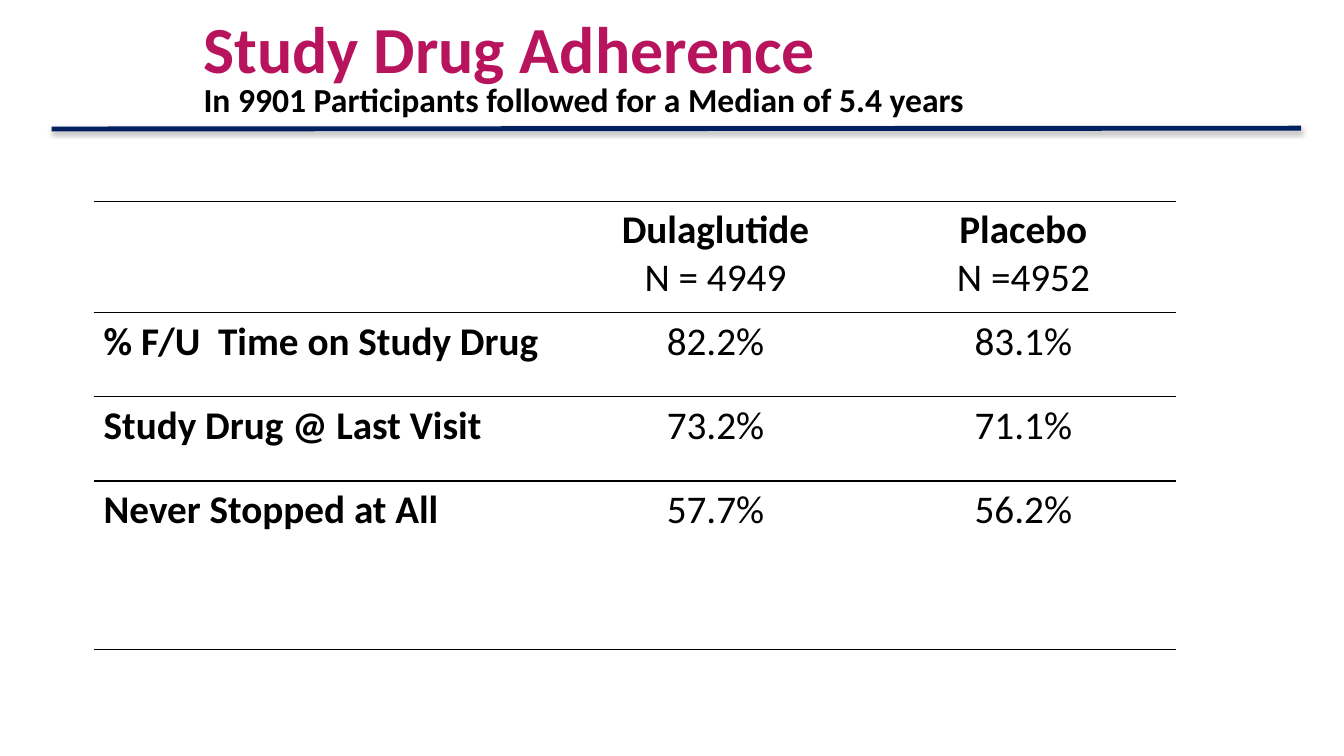
from lxml import etree
from pptx import Presentation
from pptx.dml.color import RGBColor
from pptx.enum.shapes import MSO_CONNECTOR
from pptx.enum.text import MSO_ANCHOR, PP_ALIGN
from pptx.oxml import parse_xml
from pptx.oxml.ns import nsdecls
from pptx.util import Cm, Pt

PLAIN = "{2D5ABB26-0587-4C30-8999-92F81FD0307C}"
HEAD = [
    ("Study Drug Adherence", {"size": Pt(47)}, "B8145E"),
    ("In 9901 Participants followed for a Median of 5.4 years",
     {"size": Pt(24)}, "000000"),
]
ROWS = [
    ("", "Dulaglutide\nN = 4949", "Placebo\nN =4952"),
    ("% F/U  Time on Study Drug", "82.2%", "83.1%"),
    ("Study Drug @ Last Visit", "73.2%", "71.1%"),
    ("Never Stopped at All", "57.7%", "56.2%"),
    ("", "", ""),
]
WIDTHS = (11.76, 7.82, 7.7)
HEIGHTS = (2.8,) + (2.12,) * 4
RULED = {0, 1, 2, 5}  # row edges that carry a line, counted from the top


def color(code):
    return RGBColor.from_string(code)


class Deck:
    def __init__(self, face):
        self.face = face
        self.prs = Presentation()
        self.prs.slide_width, self.prs.slide_height = Cm(33.87), Cm(19.05)
        self.slide = self.prs.slides.add_slide(self.prs.slide_layouts[6])

    def style(self, font, form, code="000000"):
        for key, value in {"name": self.face, **form}.items():
            setattr(font, key, value)
        font.color.rgb = color(code)

    def title(self, box, lines):
        frame = self.slide.shapes.add_textbox(*map(Cm, box)).text_frame
        frame.word_wrap = True
        frame.vertical_anchor = MSO_ANCHOR.MIDDLE
        para = frame.paragraphs[0]
        para.line_spacing = 0.8
        for i, (text, form, code) in enumerate(lines):
            if i:
                para.add_line_break()
            run = para.add_run()
            run.text = text
            self.style(run.font, {"bold": True, **form}, code)

    def rule(self, ends, code, width):
        """Draw a straight line with a soft shadow below it."""
        line = self.slide.shapes.add_connector(
            MSO_CONNECTOR.STRAIGHT, *map(Cm, ends))
        line.line.color.rgb = color(code)
        line.line.width = Pt(width)
        line._element.spPr.append(parse_xml(
            f'<a:effectLst {nsdecls("a")}><a:outerShdw blurRad="40000" '
            'dist="23000" dir="5400000" rotWithShape="0">'
            '<a:srgbClr val="000000"><a:alpha val="35000"/></a:srgbClr>'
            '</a:outerShdw></a:effectLst>'))

    def edge(self, cell, side):
        cell._tc.get_or_add_tcPr().append(parse_xml(
            f'<a:{side} {nsdecls("a")} w="{Pt(1)}"><a:solidFill>'
            f'<a:srgbClr val="000000"/></a:solidFill></a:{side}>'))

    def cell(self, cell, text, head, first):
        cell.text = text
        for i, para in enumerate(cell.text_frame.paragraphs):
            para.alignment = PP_ALIGN.LEFT if first else PP_ALIGN.CENTER
            bold = first or (head and i == 0)
            self.style(para.font, {"size": Pt(28), "bold": bold})
        cell.fill.background()

    def table(self, left, top, rows, widths, heights, ruled):
        size = map(Cm, (left, top, sum(widths), sum(heights)))
        grid = self.slide.shapes.add_table(
            len(rows), len(widths), *size).table
        props = grid._tbl.tblPr
        props.find("{*}tableStyleId").text = PLAIN
        grid.horz_banding = False
        for col, width in zip(grid.columns, widths):
            col.width = Cm(width)
        for r, (row, height) in enumerate(zip(rows, heights)):
            grid.rows[r].height = Cm(height)
            for c, text in enumerate(row):
                spot = grid.cell(r, c)
                for side, line in (("lnT", r), ("lnB", r + 1)):
                    if line in ruled:
                        self.edge(spot, side)
                self.cell(spot, text, r == 0, c == 0)


def main():
    deck = Deck("Calibri")
    deck.rule((1.3, 3.25, 32.79, 3.23), "002060", 3.5)
    deck.table(2.36, 5.08, ROWS, WIDTHS, HEIGHTS, RULED)
    deck.title((4.88, 0.2, 28.52, 3.18), HEAD)
    deck.prs.save("out.pptx")


if __name__ == "__main__":
    main()
